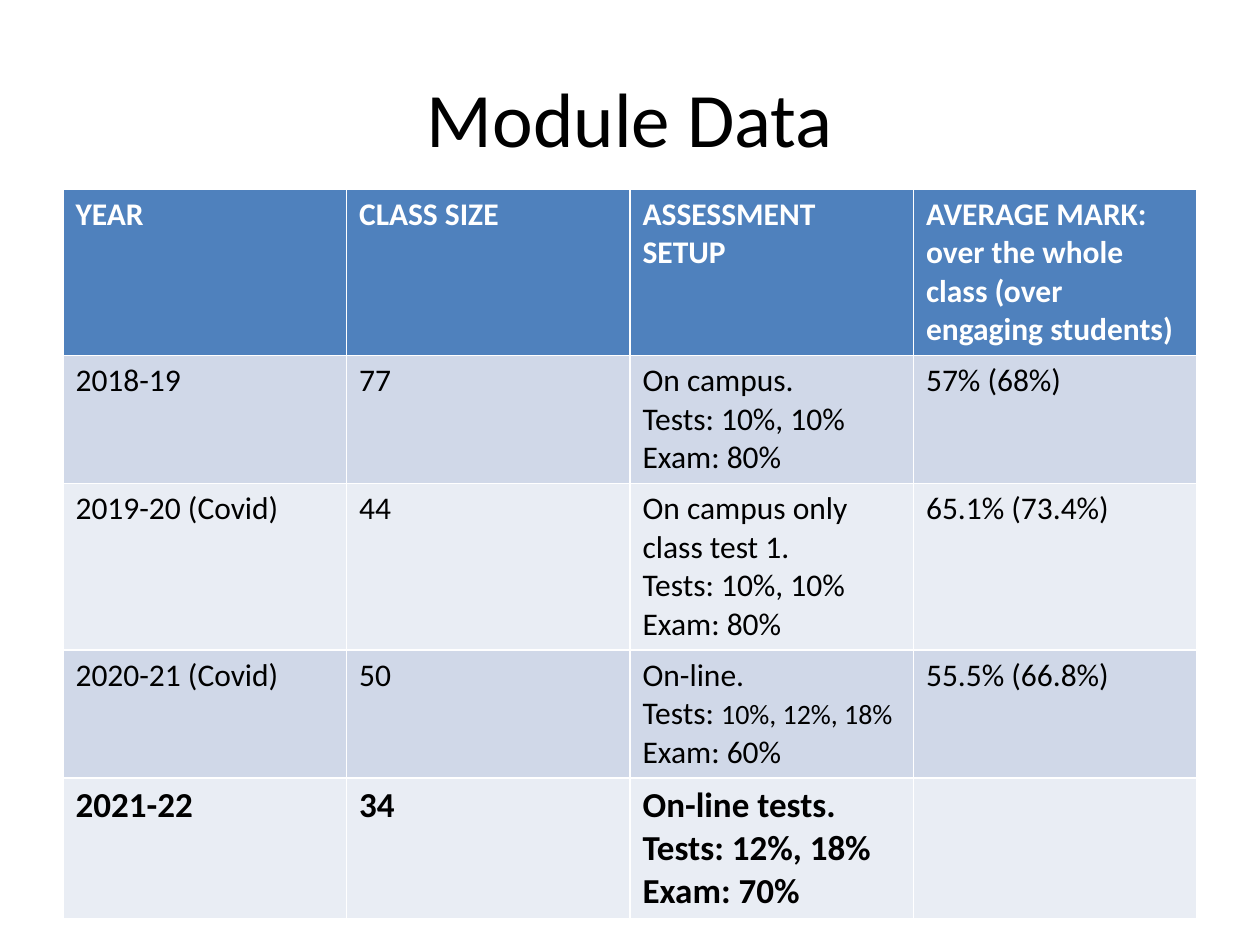
from dataclasses import dataclass

from pptx import Presentation
from pptx.dml.color import RGBColor
from pptx.enum.text import MSO_ANCHOR, PP_ALIGN
from pptx.util import Inches, Pt


@dataclass(frozen=True)
class Theme:
    font: str = "Calibri"
    title_size: int = 44
    body_size: int = 18
    small_size: int = 16
    current_size: int = 20
    ink: str = "000000"
    header_ink: str = "FFFFFF"
    header_fill: str = "4F81BD"
    bands: tuple = ("D0D8E8", "E9EDF4")


theme = Theme()


def style_span(span, size, color, bold=False):
    span.font.name = theme.font
    span.font.size = Pt(size)
    span.font.bold = bold
    span.font.color.rgb = RGBColor.from_string(color)


SMALL_MARK = "|"
records = [
    ["YEAR", "CLASS SIZE", "ASSESSMENT SETUP",
     "AVERAGE MARK: over the whole class (over engaging students)"],
    ["2018-19", "77", "On campus.\nTests: 10%, 10%\nExam: 80%", "57% (68%)"],
    ["2019-20 (Covid)", "44",
     "On campus only class test 1.\nTests: 10%, 10%\nExam: 80%", "65.1% (73.4%)"],
    ["2020-21 (Covid)", "50",
     "On-line.\nTests: |10%, 12%, 18%\nExam: 60%", "55.5% (66.8%)"],
    ["2021-22", "34", "On-line tests.\nTests: 12%, 18%\nExam: 70%", ""],
]
row_count, column_count = len(records), len(records[0])

deck = Presentation()
deck.slide_width, deck.slide_height = Inches(10), Inches(7.5)
page = deck.slides.add_slide(deck.slide_layouts[5])

margin = int(deck.slide_width * 0.05)
content_width = deck.slide_width - 2 * margin

title = page.shapes.title
title.left, title.top = margin, int(deck.slide_height * 0.04)
title.width, title.height = content_width, Inches(1.25)
title.text_frame.text = "Module Data"
title.text_frame.vertical_anchor = MSO_ANCHOR.MIDDLE
title_para = title.text_frame.paragraphs[0]
title_para.alignment = PP_ALIGN.CENTER
style_span(title_para.runs[0], theme.title_size, theme.ink)

table_height = int(deck.slide_height * 0.76)
table_frame = page.shapes.add_table(
    row_count, column_count, margin, int(deck.slide_height * 0.2),
    content_width, table_height)
table = table_frame.table
for row in table.rows:
    row.height = Inches(0.41)
table_frame.height = table_height

for row_index, record in enumerate(records):
    is_header = row_index == 0
    is_current = row_index == row_count - 1
    fill = theme.header_fill if is_header else theme.bands[(row_index - 1) % 2]
    color = theme.header_ink if is_header else theme.ink
    size = theme.current_size if is_current else theme.body_size
    for column_index, entry in enumerate(record):
        cell = table.cell(row_index, column_index)
        cell.fill.solid()
        cell.fill.fore_color.rgb = RGBColor.from_string(fill)
        cell.text_frame.text = entry.replace(SMALL_MARK, "")
        for para, line in zip(cell.text_frame.paragraphs, entry.split("\n")):
            main, mark, small = line.partition(SMALL_MARK)
            for span in para.runs:
                span.text = main
                style_span(span, size, color, is_header or is_current)
            if mark:
                small_span = para.add_run()
                small_span.text = small
                style_span(small_span, theme.small_size, color)

deck.save("out.pptx")
